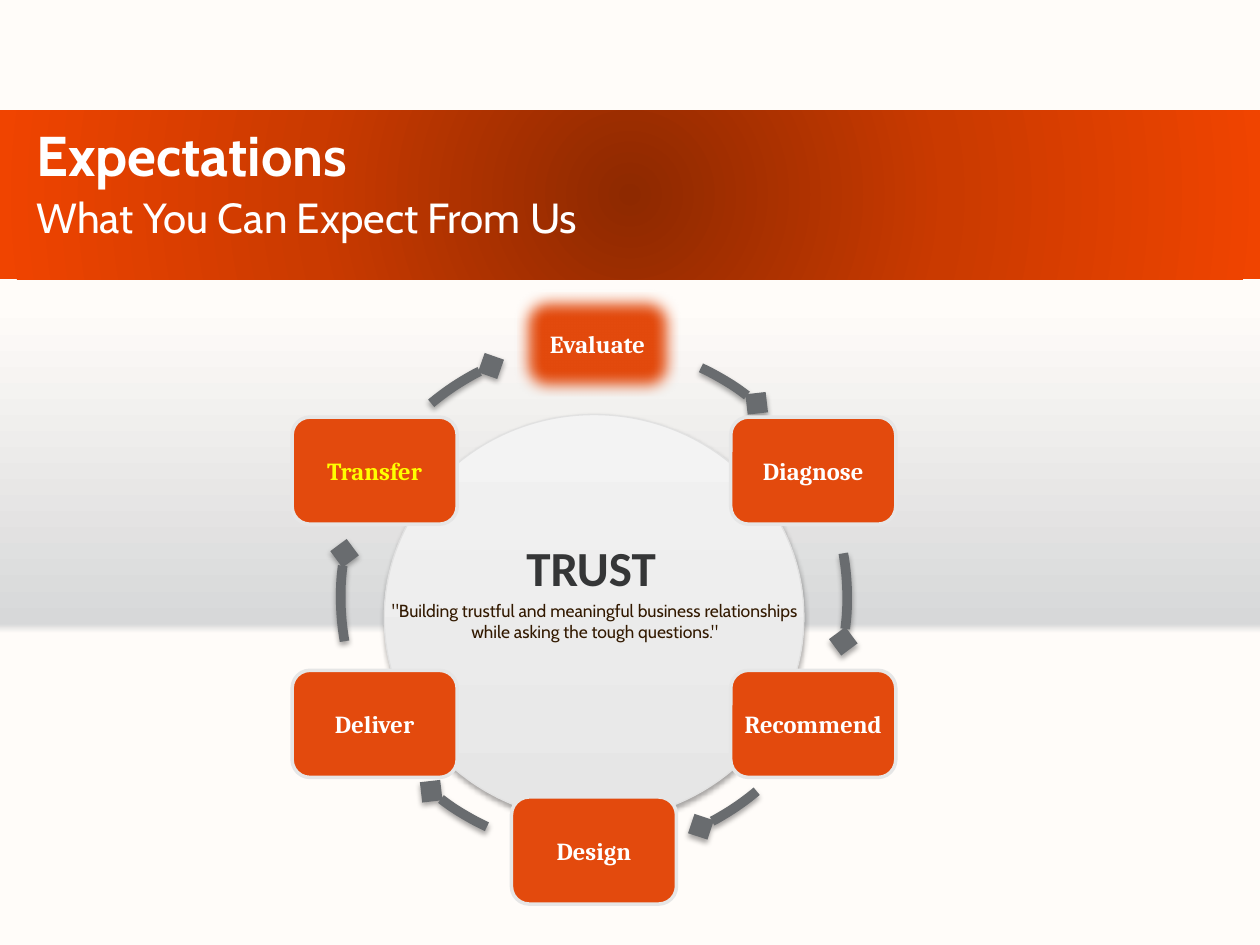
from math import cos, radians, sin

from lxml.etree import SubElement
from pptx import Presentation
from pptx.dml.color import RGBColor
from pptx.enum.shapes import MSO_SHAPE
from pptx.enum.text import MSO_ANCHOR, PP_ALIGN
from pptx.oxml.ns import qn
from pptx.util import Pt

CREAM = RGBColor(0xFF, 0xFC, 0xF9)
SILVER = RGBColor(0xD7, 0xD8, 0xD9)
PALE = RGBColor(0xE6, 0xE6, 0xE6)
PALER = RGBColor(0xF3, 0xF3, 0xF3)
RIM = RGBColor(0xE1, 0xE1, 0xE1)
RUST = RGBColor(0x8E, 0x29, 0x00)
BURNT = RGBColor(0xCA, 0x3A, 0x00)
BRIGHT = RGBColor(0xF0, 0x44, 0x00)
ORANGE = RGBColor(0xE3, 0x4A, 0x0D)
GREY = RGBColor(0x69, 0x6C, 0x6F)
CHARCOAL = RGBColor(0x35, 0x36, 0x37)
BROWN = RGBColor(0x32, 0x19, 0x00)
WHITE = RGBColor(0xFF, 0xFF, 0xFF)
YELLOW = RGBColor(0xFF, 0xFF, 0x00)

STEPS = [
    ("Evaluate", WHITE),
    ("Diagnose", WHITE),
    ("Recommend", WHITE),
    ("Design", WHITE),
    ("Deliver", WHITE),
    ("Transfer", YELLOW),
]
ARROW_SPANS = [(295, 310), (350, 10), (50, 65), (115, 130), (170, 190), (230, 246)]


def set_gradient(fill, owner, stops, radial=False):
    """Fill with (percent, colour) stops, upwards or from the centre."""
    fill.gradient()
    gradient = owner.find(".//" + qn("a:gradFill"))
    for child in list(gradient):
        gradient.remove(child)
    stop_list = SubElement(gradient, qn("a:gsLst"))
    for percent, color in stops:
        stop = SubElement(stop_list, qn("a:gs"), pos=str(percent * 1000))
        SubElement(stop, qn("a:srgbClr"), val=str(color))
    if radial:
        route = SubElement(gradient, qn("a:path"), path="circle")
        SubElement(route, qn("a:fillToRect"), l="50000", t="50000", r="50000", b="50000")
    else:
        SubElement(gradient, qn("a:lin"), ang="16200000", scaled="0")


def add_effect(shape, name, **attributes):
    """Give the shape one effect and return its element."""
    effects = shape.element.spPr.find(qn("a:effectLst"))
    return SubElement(effects, qn("a:" + name), **attributes)


def add_shadow(shape):
    """Cast a soft shadow below the shape."""
    shadow = add_effect(shape, "outerShdw", blurRad=str(Pt(3.1)), dist=str(Pt(1.8)),
                        dir="5400000", rotWithShape="0")
    color = SubElement(shadow, qn("a:srgbClr"), val="000000")
    SubElement(color, qn("a:alpha"), val="35000")


def add_plain_shape(slide, kind, left, top, width, height):
    """Add a preset shape without the theme's shadow."""
    shape = slide.shapes.add_shape(kind, Pt(left), Pt(top), Pt(width), Pt(height))
    shape.shadow.inherit = False
    return shape


def format_text(frame, font_name, size, color, bold=False, align=PP_ALIGN.LEFT):
    """Format every paragraph and run of a text frame."""
    for paragraph in frame.paragraphs:
        paragraph.alignment = align
        for run in paragraph.runs:
            run.font.name = font_name
            run.font.size = Pt(size)
            run.font.bold = bold
            run.font.color.rgb = color


def add_text(slide, left, top, width, height, text, wrap=True, **style):
    """Add a text box in one style."""
    box = slide.shapes.add_textbox(Pt(left), Pt(top), Pt(width), Pt(height))
    frame = box.text_frame
    frame.word_wrap = wrap
    frame.text = text
    format_text(frame, **style)
    return frame


def add_banner(slide, left, top, width, height):
    """Draw the heading band with its title and subtitle."""
    band = add_plain_shape(slide, MSO_SHAPE.RECTANGLE, left, top, width, height)
    set_gradient(band.fill, band.element.spPr, [(0, RUST), (50, BURNT), (100, BRIGHT)], True)
    band.line.fill.background()
    add_text(slide, left + 13.7, top + 2.2, 361, 44.6, "Expectations",
             font_name="Cabin", size=32, color=WHITE, bold=True)
    subtitle = add_text(slide, left + 13.7, top + 50.4, 511, 28.1, "What You Can Expect From Us",
                        font_name="Cabin", size=24, color=WHITE)
    subtitle.vertical_anchor = MSO_ANCHOR.BOTTOM


def add_hub(slide, left, top, width, height):
    """Draw the central disc."""
    disc = add_plain_shape(slide, MSO_SHAPE.OVAL, left, top, width, height)
    set_gradient(disc.fill, disc.element.spPr, [(0, PALE), (100, PALER)])
    disc.line.color.rgb = RIM
    disc.line.width = Pt(0.75)
    add_shadow(disc)


def add_hub_text(slide, left, top, width):
    """Write the motto over the disc."""
    add_text(slide, left + 133.2, top, 90, 41, "TRUST", wrap=False,
             font_name="Calibri", size=28, color=CHARCOAL, bold=True)
    add_text(slide, left, top + 35.3, width, 43.9,
             '"Building trustful and meaningful business relationships\n'
             'while asking the tough questions."',
             font_name="Cabin", size=10, color=BROWN, align=PP_ALIGN.CENTER)


def add_step(slide, left, top, width, height, label, color):
    """Draw one labelled step of the cycle."""
    step = add_plain_shape(slide, MSO_SHAPE.ROUNDED_RECTANGLE, left, top, width, height)
    step.fill.solid()
    step.fill.fore_color.rgb = ORANGE
    step.line.color.rgb = PALE
    step.line.width = Pt(2)
    frame = step.text_frame
    frame.margin_left = frame.margin_right = Pt(4.3)
    frame.word_wrap = True
    frame.vertical_anchor = MSO_ANCHOR.MIDDLE
    frame.text = label
    format_text(frame, "Cambria", 14, color, True, PP_ALIGN.CENTER)
    return step


def add_cycle_arrow(slide, left, top, size, start, end):
    """Draw a diamond-headed arc on the cycle's circle, angles in degrees."""
    arc = add_plain_shape(slide, MSO_SHAPE.ARC, left, top, size, size)
    arc.adjustments[0] = start * 0.6
    arc.adjustments[1] = end * 0.6
    arc.fill.background()
    arc.line.color.rgb = GREY
    arc.line.width = Pt(5.5)
    SubElement(arc.line._get_or_add_ln(), qn("a:tailEnd"), type="diamond")
    add_shadow(arc)


def add_cycle(slide, left, top, size):
    """Place the steps evenly on a circle with arrows between them."""
    radius = size / 2
    step_width, step_height = 94.3, 61.2
    for index, ((label, color), span) in enumerate(zip(STEPS, ARROW_SPANS)):
        angle = radians(360 / len(STEPS) * index - 90)
        step_left = left + radius * (1 + cos(angle)) - step_width / 2
        step_top = top + radius * (1 + sin(angle)) - step_height / 2
        is_first = index == 0
        step = add_step(slide, step_left + 2 * is_first, step_top,
                        step_width, step_height, label, color)
        if is_first:
            step.line.color.rgb = SILVER
            add_effect(step, "softEdge", rad=str(Pt(8.86)))
        add_cycle_arrow(slide, left, top, size, *span)


def main():
    """Build and save the presentation."""
    presentation = Presentation()
    presentation.slide_width = Pt(720)
    presentation.slide_height = Pt(540)
    slide = presentation.slides.add_slide(presentation.slide_layouts[6])
    set_gradient(slide.background.fill, slide.element, [(33, CREAM), (34, SILVER), (68, CREAM)])
    add_banner(slide, 0, 63, 720, 96.5)
    add_hub(slide, 219.6, 236.9, 239.8, 231.8)
    add_cycle(slide, 194.7, 196.6, 289.4)
    add_hub_text(slide, 160.5, 303.8, 358.5)
    presentation.save("out.pptx")


if __name__ == "__main__":
    main()
